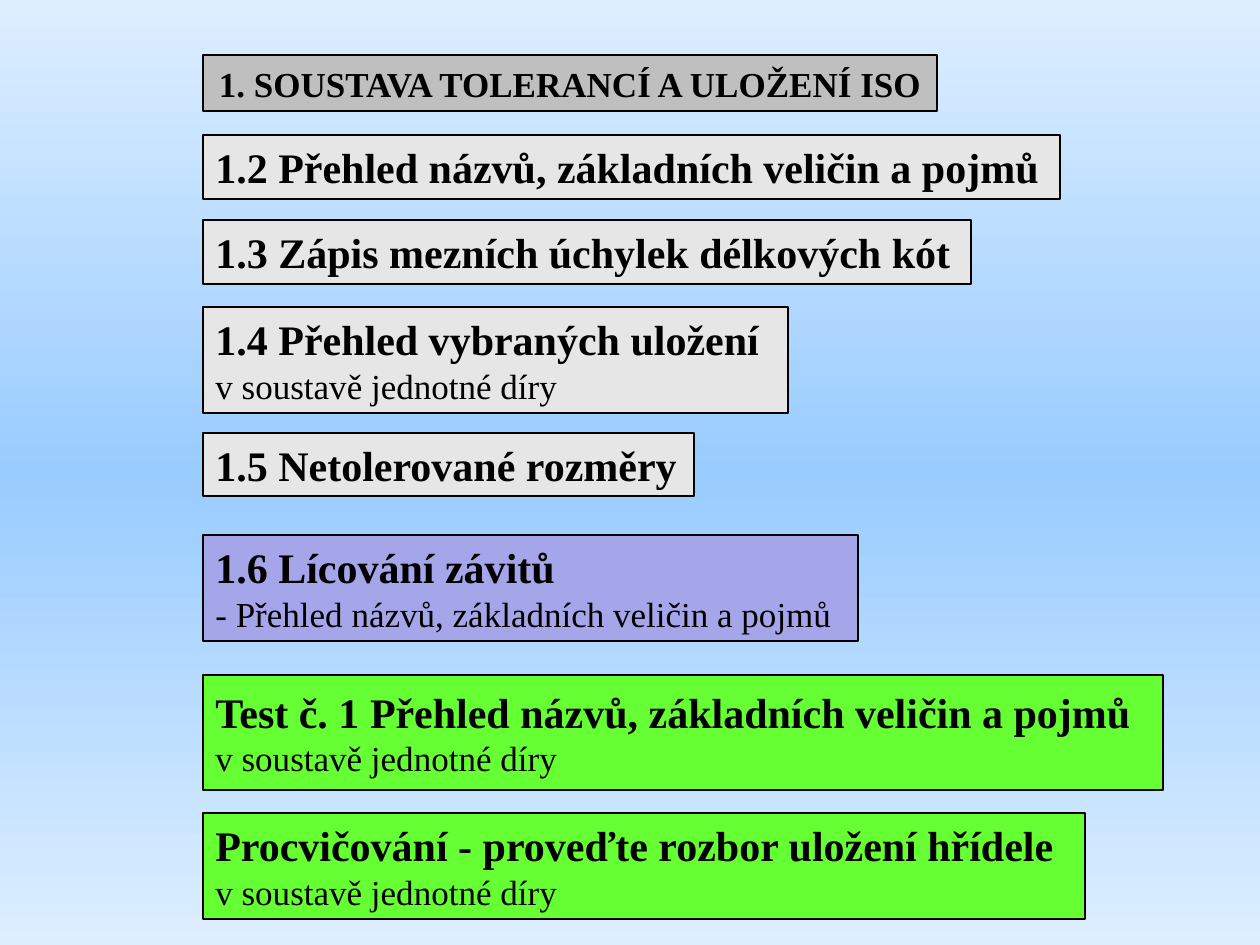
import copy
from dataclasses import dataclass

import pptx
import pptx.dml.color
import pptx.enum.shapes
import pptx.enum.text
import pptx.oxml.ns
import pptx.util

PX = 914400 // 126
LEFT = 203


@dataclass(frozen=True)
class Theme:
    """Colours, font and type sizes of the slide."""
    font: str = "Times New Roman"
    ink: str = "000000"
    edge: str = "DDEEFF"
    middle: str = "99CCFF"
    title: str = "BFBFBF"
    topic: str = "E6E6E6"
    threads: str = "A5A5E9"
    practice: str = "66FF33"
    heading_size: int = 24
    detail_size: int = 20
    border: float = 0.75


THEME = Theme()
HOLE_BASIS = "v\u00a0soustavě jednotné díry"
TOPICS = [
    (135, 857, 64, THEME.topic, "1.2 Přehled názvů, základních veličin a pojmů", None),
    (220, 768, 64, THEME.topic, "1.3 Zápis mezních úchylek délkových kót", None),
    (307, 585, 106, THEME.topic, "1.4 Přehled vybraných uložení", HOLE_BASIS),
    (433, 491, 63, THEME.topic, "1.5 Netolerované rozměry", None),
    (535, 655, 106, THEME.threads, "1.6 Lícování závitů",
     "- Přehled názvů, základních veličin a pojmů"),
    (675, 960, 115, THEME.practice,
     "Test č. 1 Přehled názvů, základních veličin a pojmů", HOLE_BASIS),
    (813, 882, 106, THEME.practice,
     "Procvičování - proveďte rozbor uložení hřídele", HOLE_BASIS),
]


def rgb(value):
    """Turn a hex string into a colour."""
    return pptx.dml.color.RGBColor.from_string(value)


def paint_background(slide):
    """Fill the background with a vertical three-stop gradient."""
    fill = slide.background.fill
    fill.gradient()
    fill.gradient_angle = 270
    stop_list = slide.element.find(".//" + pptx.oxml.ns.qn("a:gsLst"))
    stop_list.append(copy.deepcopy(stop_list[-1]))
    colours = (THEME.edge, THEME.middle, THEME.edge)
    for index, (stop, colour) in enumerate(zip(fill.gradient_stops, colours)):
        stop.position = index / 2
        stop.color.rgb = rgb(colour)


def add_panel(slide, top, width, height, colour):
    """Add a bordered panel and return its text frame."""
    panel = slide.shapes.add_shape(
        pptx.enum.shapes.MSO_SHAPE.RECTANGLE,
        LEFT * PX, top * PX, width * PX, height * PX)
    panel.shadow.inherit = False
    panel.fill.solid()
    panel.fill.fore_color.rgb = rgb(colour)
    panel.line.color.rgb = rgb(THEME.ink)
    panel.line.width = pptx.util.Pt(THEME.border)
    frame = panel.text_frame
    frame.word_wrap = True
    frame.vertical_anchor = pptx.enum.text.MSO_ANCHOR.MIDDLE
    return frame


def write(paragraph, text, size, bold, align=pptx.enum.text.PP_ALIGN.LEFT):
    """Set the wording and style of one paragraph."""
    paragraph.text = text
    paragraph.alignment = align
    paragraph.font.name = THEME.font
    paragraph.font.size = pptx.util.Pt(size)
    paragraph.font.bold = bold
    paragraph.font.color.rgb = rgb(THEME.ink)


def add_title(slide):
    """Add the chapter title."""
    frame = add_panel(slide, 55, 734, 56, THEME.title)
    write(frame.paragraphs[0], "1. SOUSTAVA TOLERANCÍ A ULOŽENÍ ISO",
          THEME.detail_size, True, pptx.enum.text.PP_ALIGN.CENTER)


def add_topic(slide, top, width, height, colour, heading, detail):
    """Add a topic heading with its optional detail line."""
    frame = add_panel(slide, top, width, height, colour)
    write(frame.paragraphs[0], heading, THEME.heading_size, True)
    if detail:
        write(frame.add_paragraph(), detail, THEME.detail_size, False)


def main():
    """Build and save the slide."""
    deck = pptx.Presentation()
    deck.slide_width = pptx.util.Inches(10)
    deck.slide_height = pptx.util.Inches(7.5)
    slide = deck.slides.add_slide(deck.slide_layouts[6])
    paint_background(slide)
    add_title(slide)
    for topic in TOPICS:
        add_topic(slide, *topic)
    deck.save("out.pptx")


if __name__ == "__main__":
    main()
